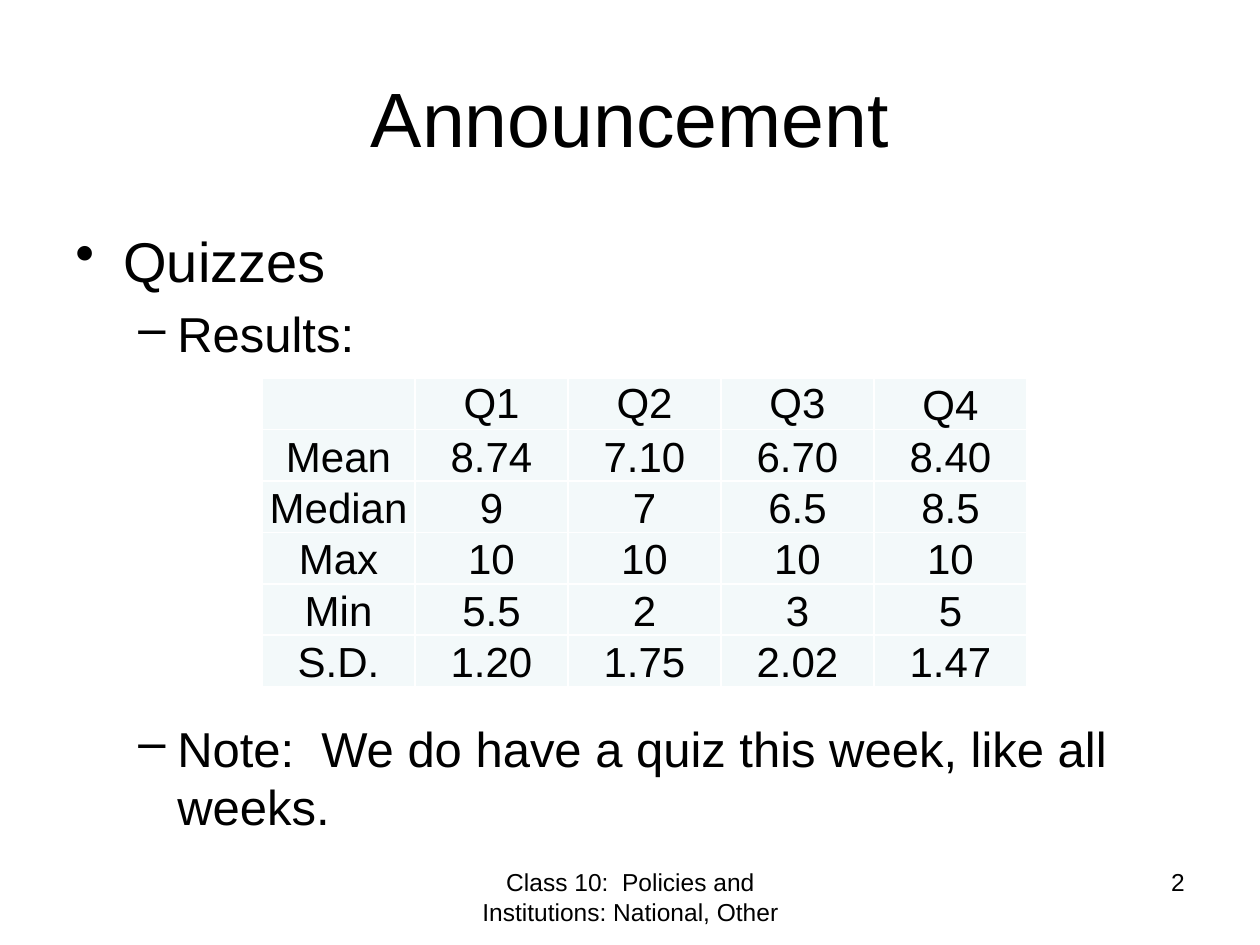
from lxml import etree
from pptx import Presentation
from pptx import util as u
from pptx.dml.color import RGBColor
from pptx.enum import text
from pptx.oxml import ns

TITLE = "Announcement"
BULLETS = [
    ("•", "Quizzes", 32, 48, -48, 7),
    ("–", "Results:", 28, 102, -39, 6),
    ("–", "Note:  We do have a quiz this week, like all weeks.", 28, 102, -39, 203),
]
RESULTS = [
    ("", "Q1", "Q2", "Q3", "Q4"),
    ("Mean", "8.74", "7.10", "6.70", "8.40"),
    ("Median", "9", "7", "6.5", "8.5"),
    ("Max", "10", "10", "10", "10"),
    ("Min", "5.5", "2", "3", "5"),
    ("S.D.", "1.20", "1.75", "2.02", "1.47"),
]
FOOTER = "Class 10:  Policies and Institutions: National, Other"
PAGE = "2"
INK, PALE, WHITE = "000000", "F3F9FA", "FFFFFF"
COLUMN, ROW = 153, 48


def px(n):
    return u.Emu(round(n * 914400 / 126))


def color(value):
    return RGBColor.from_string(value)


def style(paragraph, size, align):
    paragraph.alignment = align
    for font in [paragraph.font] + [run.font for run in paragraph.runs]:
        font.name, font.size = "Arial", u.Pt(size)
        font.color.rgb = color(INK)


def add_text(slide, left, top, width, height):
    frame = slide.shapes.add_textbox(px(left), px(top), px(width), px(height)).text_frame
    frame.word_wrap = True
    return frame


def set_bullet(paragraph, mark, margin, indent):
    props = paragraph._p.get_or_add_pPr()
    props.set("marL", str(px(margin)))
    props.set("indent", str(px(indent)))
    bullet = etree.Element(ns.qn("a:buChar"), char=mark)
    props.insert_element_before(bullet, "a:tabLst", "a:defRPr", "a:extLst")


def set_borders(cell):
    props = cell._tc.get_or_add_tcPr()
    for position, side in enumerate(("lnL", "lnR", "lnT", "lnB")):
        line = etree.Element(ns.qn(f"a:{side}"), w=str(u.Pt(1)))
        fill = etree.SubElement(line, ns.qn("a:solidFill"))
        etree.SubElement(fill, ns.qn("a:srgbClr"), val=WHITE)
        props.insert(position, line)


def add_bullets(slide):
    frame = add_text(slide, 63, 220, 1134, 624)
    for i, (mark, words, size, margin, indent, gap) in enumerate(BULLETS):
        paragraph = frame.paragraphs[0] if i == 0 else frame.add_paragraph()
        paragraph.text = words
        paragraph.level = min(i, 1)
        paragraph.space_before = u.Pt(gap)
        style(paragraph, size, text.PP_ALIGN.LEFT)
        set_bullet(paragraph, mark, margin, indent)


def add_results(slide):
    rows, columns = len(RESULTS), len(RESULTS[0])
    results = slide.shapes.add_table(
        rows, columns, px(262), px(378), px(COLUMN * columns), px(ROW * rows)).table
    for r, values in enumerate(RESULTS):
        results.rows[r].height = px(ROW)
        for c, value in enumerate(values):
            cell = results.cell(r, c)
            cell.text = value
            cell.margin_left = cell.margin_right = cell.margin_top = px(1)
            cell.margin_bottom = 0
            middle = r == 0 and c < columns - 1
            cell.vertical_anchor = text.MSO_ANCHOR.MIDDLE if middle else text.MSO_ANCHOR.BOTTOM
            cell.fill.solid()
            cell.fill.fore_color.rgb = color(PALE)
            style(cell.text_frame.paragraphs[0], 24, text.PP_ALIGN.CENTER)
            set_borders(cell)


def main():
    deck = Presentation()
    deck.slide_width, deck.slide_height = px(1260), px(945)
    slide = deck.slides.add_slide(deck.slide_layouts[5])
    title = slide.shapes.title
    title.left, title.top, title.width, title.height = px(63), px(38), px(1134), px(157)
    title.text_frame.text = TITLE
    title.text_frame.vertical_anchor = text.MSO_ANCHOR.MIDDLE
    style(title.text_frame.paragraphs[0], 44, text.PP_ALIGN.CENTER)
    add_bullets(slide)
    for words, left, width, align in (
        (FOOTER, 431, 399, text.PP_ALIGN.CENTER),
        (PAGE, 903, 294, text.PP_ALIGN.RIGHT),
    ):
        frame = add_text(slide, left, 861, width, 65)
        frame.text = words
        style(frame.paragraphs[0], 14, align)
    add_results(slide)
    deck.save("out.pptx")


if __name__ == "__main__":
    main()
